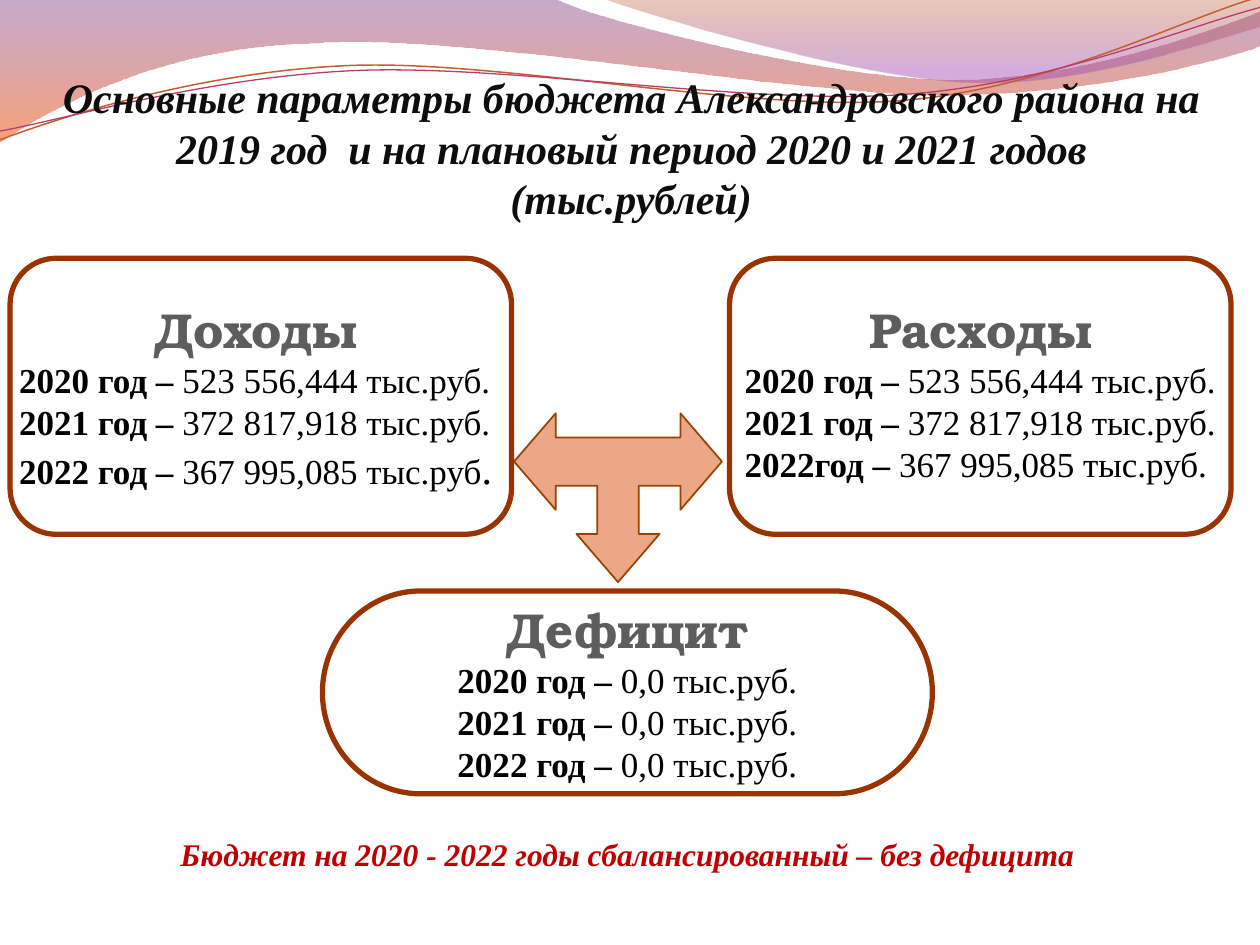
from dataclasses import dataclass
from math import cos, radians, sin

from lxml import etree
from pptx import Presentation
from pptx.dml.color import RGBColor
from pptx.enum.shapes import MSO_SHAPE as Preset
from pptx.enum.text import MSO_ANCHOR as Anchor, MSO_AUTO_SIZE as AutoSize, PP_ALIGN as Align
from pptx.oxml import parse_xml
from pptx.oxml.ns import nsdecls, qn
from pptx.util import Inches, Pt


@dataclass(frozen=True)
class Theme:
    serif: str = "Times New Roman"
    slab: str = "TeX Gyre Bonum"
    title: str = "0D0D0D"
    heading: str = "5D5D5D"
    figures: str = "000000"
    border: str = "993300"
    arrow: str = "EBA786"
    arrow_edge: str = "984204"
    conclusion: str = "C00000"
    orange_line: str = "C45F30"
    pink_line: str = "B83D68"
    wave: tuple = ((0, "834591", 45), (100, "F35307", 55))
    corner: tuple = ((0, "B74915", 30), (80, "A14BB4", 45))
    title_size: int = 24
    heading_size: int = 28
    figure_size: int = 20
    conclusion_size: int = 18


theme = Theme()


def style_run(run, size, color, font=theme.serif, bold=True, italic=False):
    run.font.name = font
    run.font.size = Pt(size)
    run.font.bold = bold
    run.font.italic = italic
    run.font.color.rgb = RGBColor.from_string(color)


def draw_outline(start, steps, close=True):
    corners = [(Inches(x), Inches(y)) for x, y in [start] + [p for step in steps for p in step]]
    builder = slide.shapes.build_freeform(*corners[0])
    builder.add_line_segments(corners[1:], close=close)
    outline = builder.convert_to_shape()
    outline.shadow.inherit = False
    segments = iter(list(outline.element.iter(qn("a:lnTo"))))
    for step in steps:
        lines = [next(segments) for point in step]
        if len(step) == 3:
            curve = etree.Element(qn("a:cubicBezTo"))
            lines[0].addprevious(curve)
            for line in lines:
                curve.append(line[0])
                line.getparent().remove(line)
    return outline


prs = Presentation()
prs.slide_width, prs.slide_height = Inches(10), Inches(7.5)
slide = prs.slides.add_slide(prs.slide_layouts[5])
backdrop = slide.slide_layout.shapes.element

bands = [
    (theme.wave, (0, 0), [
        ((4.4, -0.01),),
        ((4.76, 0.17), (6.64, 0.63), (7.58, 0.63)),
        ((8.53, 0.63), (9.58, 0.26), (10, 0.09)),
        ((10.01, 0.36),),
        ((9.83, 0.44), (8.7, 0.76), (7.46, 0.75)),
        ((6.22, 0.75), (3.82, 0.28), (2.57, 0.34)),
        ((1.29, 0.36), (0.46, 0.83), (-0.01, 1.13)),
    ]),
    (theme.corner, (4.79, -0.01), [
        ((5.09, 0.11), (6.82, 0.62), (7.69, 0.65)),
        ((8.56, 0.69), (9.61, 0.32), (10, 0.21)),
        ((10, 0),),
    ]),
]
for stops, start, steps in bands:
    band = draw_outline(start, steps)
    band.line.fill.background()
    gradient = parse_xml(f'<a:gradFill {nsdecls("a")} rotWithShape="1"><a:gsLst/>'
                         '<a:lin ang="5400000" scaled="0"/></a:gradFill>')
    for position, color, opacity in stops:
        stop = etree.SubElement(gradient[0], qn("a:gs"), pos=str(position * 1000))
        tint = etree.SubElement(stop, qn("a:srgbClr"), val=color)
        etree.SubElement(tint, qn("a:alpha"), val=str(opacity * 1000))
    band.element.spPr.find(qn("a:custGeom")).addnext(gradient)
    backdrop.append(band.element)

tilt = 2.7
turn_x, turn_y = cos(radians(tilt)), sin(radians(tilt))
waves = [
    (theme.orange_line, 0.85, (4.99, 0.575), (0, 1.11), [
        ((0.48, 0.93), (1.58, 0.57), (2.77, 0.52)),
        ((3.95, 0.47), (5.93, 0.89), (7.13, 0.8)),
        ((8.33, 0.71), (9.38, 0.15), (9.98, -0.02)),
    ]),
    (theme.pink_line, 0.75, (5, 0.59), (0, 1.04), [
        ((0.47, 0.96), (1.64, 0.61), (2.83, 0.56)),
        ((4.03, 0.51), (5.97, 0.84), (7.17, 0.75)),
        ((8.36, 0.67), (9.41, 0.21), (10, 0.06)),
    ]),
]
for color, width, (pivot_x, pivot_y), start, steps in waves:
    level = [[(pivot_x + (x - pivot_x) * turn_x - (y - pivot_y) * turn_y,
               pivot_y + (x - pivot_x) * turn_y + (y - pivot_y) * turn_x)
              for x, y in step] for step in [(start,)] + steps]
    wave = draw_outline(level[0][0], level[1:], close=False)
    wave.rotation = 360 - tilt
    wave.fill.background()
    wave.line.color.rgb = RGBColor.from_string(color)
    wave.line.width = Pt(width)
    backdrop.append(wave.element)

title = slide.shapes.title
title.left, title.top, title.width, title.height = map(Inches, (0.37, 0.52, 9.28, 1.31))
title.text_frame.text = ("Основные параметры бюджета Александровского района на 2019 год  и на "
                         "плановый период 2020 и 2021 годов (тыс.рублей)")

amounts = ["523 556,444 тыс.руб.", "372 817,918 тыс.руб.", "367 995,085 тыс.руб."]
years = ["2020 год – ", "2021 год – ", "2022 год – "]
panels = [
    ("Доходы", Preset.ROUNDED_RECTANGLE, (0.08, 2.05, 3.98, 2.19), Align.LEFT, years, amounts),
    ("Расходы", Preset.ROUNDED_RECTANGLE, (5.79, 2.05, 3.98, 2.19), Align.CENTER,
     years[:2] + ["2022год – "], amounts[:2] + [amounts[2] + " "]),
    ("Дефицит", Preset.FLOWCHART_TERMINATOR, (2.56, 4.69, 4.84, 1.61), Align.CENTER,
     years, ["0,0 тыс.руб."] * 3),
]
for heading, preset, place, alignment, labels, values in panels:
    panel = slide.shapes.add_shape(preset, *map(Inches, place))
    panel.shadow.inherit = False
    panel.fill.background()
    panel.line.color.rgb = RGBColor.from_string(theme.border)
    panel.line.width = Pt(3)
    frame = panel.text_frame
    frame.word_wrap = False
    frame.vertical_anchor = Anchor.MIDDLE
    frame.text = heading
    frame.paragraphs[0].alignment = Align.CENTER
    style_run(frame.paragraphs[0].runs[0], theme.heading_size, theme.heading, theme.slab)
    for label, value in zip(labels, values):
        line = frame.add_paragraph()
        line.alignment = alignment
        for text, bold in [(label, True), (value, False)]:
            run = line.add_run()
            run.text = text
            style_run(run, theme.figure_size, theme.figures, bold=bold)
    if heading == "Доходы":
        final_dot = line.add_run()
        run.text, final_dot.text = value[:-1], value[-1]
        style_run(final_dot, theme.title_size, theme.figures, bold=False)
        frame.paragraphs[0].alignment = Align.CENTER
        frame.margin_right = Inches(0.18)
    elif heading == "Расходы":
        frame.margin_bottom = Inches(0.12)

half = [(5, 0), (7, 2), (6, 2), (6, 4), (8, 4), (8, 3), (10, 5), (8, 7), (8, 6)]
grid = half + [(10 - column, row) for column, row in reversed(half[1:])]
tips = [(4.08 + column * 1.65 / 10, 3.28 + row * 1.34 / 7) for column, row in grid]
arrow = draw_outline(tips[0], [(tip,) for tip in tips[1:]])
arrow.rotation = 180
arrow.fill.solid()
arrow.fill.fore_color.rgb = RGBColor.from_string(theme.arrow)
arrow.line.color.rgb = RGBColor.from_string(theme.arrow_edge)
arrow.line.width = Pt(1)

conclusion = slide.shapes.add_textbox(*map(Inches, (1.06, 6.58, 7.84, 0.4)))
conclusion.text_frame.text = "Бюджет на 2020 - 2022 годы сбалансированный – без дефицита"

for box, size, color in [(title, theme.title_size, theme.title),
                         (conclusion, theme.conclusion_size, theme.conclusion)]:
    frame = box.text_frame
    frame.word_wrap = True
    frame.auto_size = AutoSize.NONE
    frame.vertical_anchor = Anchor.TOP
    frame.paragraphs[0].alignment = Align.CENTER
    style_run(frame.paragraphs[0].runs[0], size, color, italic=True)

prs.save("out.pptx")
